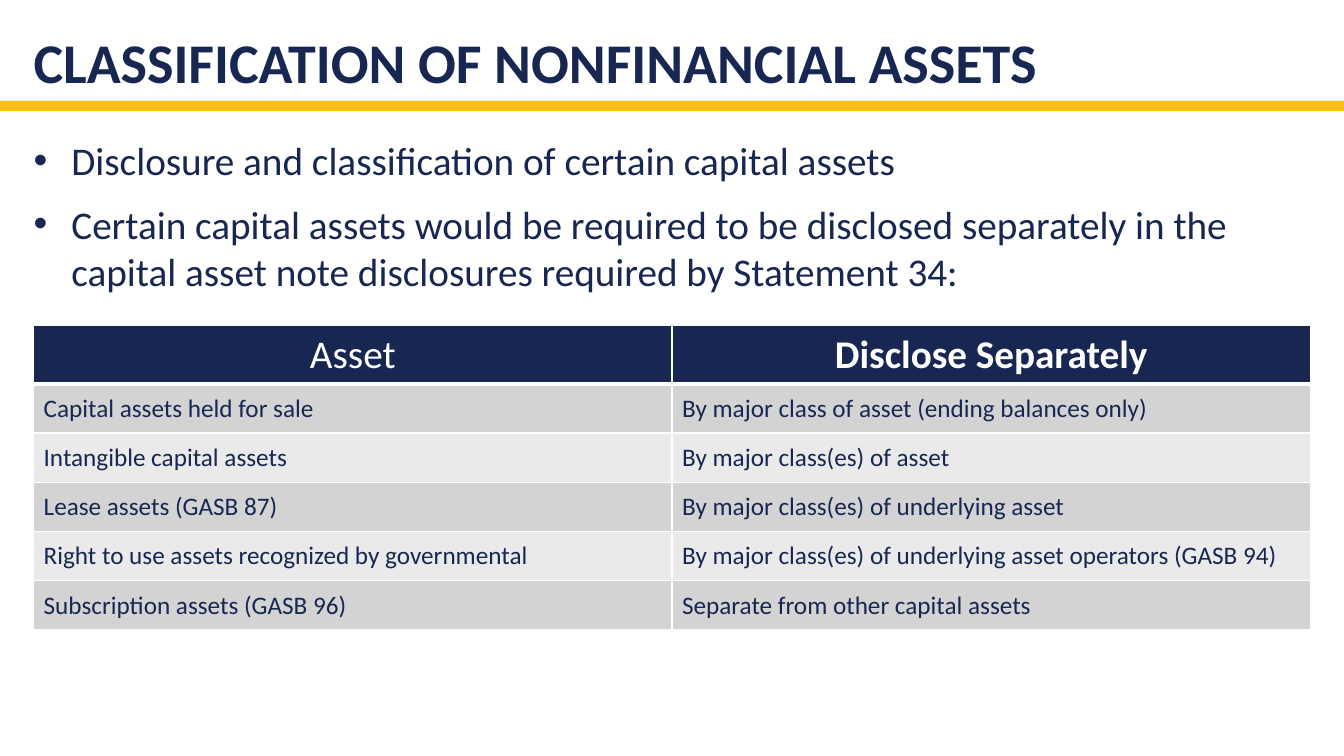
from dataclasses import dataclass

import pptx
import pptx.dml.color
import pptx.enum.shapes
import pptx.enum.text
import pptx.oxml
import pptx.oxml.ns
import pptx.util

Pt = pptx.util.Pt
ALIGN = pptx.enum.text.PP_ALIGN
ANCHOR = pptx.enum.text.MSO_ANCHOR


@dataclass(frozen=True)
class Theme:
    font: str = "Calibri"
    navy: str = "182751"
    gold: str = "FEBD11"
    white: str = "FFFFFF"
    bands: tuple = ("D3D3D4", "EAEAEB")
    title_size: int = 40
    body_size: int = 28
    cell_size: int = 18


THEME = Theme()
TITLE = "CLASSIFICATION OF NONFINANCIAL ASSETS"
POINTS = [
    "Disclosure and classification of certain capital assets",
    "Certain capital assets would be required to be disclosed separately in the "
    "capital asset note disclosures required by Statement 34:",
]
DISCLOSURES = [
    ("Asset", "Disclose Separately"),
    ("Capital assets held for sale", "By major class of asset (ending balances only)"),
    ("Intangible capital assets", "By major class(es) of asset"),
    ("Lease assets (GASB 87)", "By major class(es) of underlying asset"),
    ("Right to use assets recognized by governmental",
     "By major class(es) of underlying asset operators (GASB 94)"),
    ("Subscription assets (GASB 96)", "Separate from other capital assets"),
]


def paint(fill, color):
    fill.solid()
    fill.fore_color.rgb = pptx.dml.color.RGBColor.from_string(color)


def style_font(para, size, color, bold=False):
    para.font.name = THEME.font
    para.font.size = Pt(size)
    para.font.bold = bold
    para.font.color.rgb = pptx.dml.color.RGBColor.from_string(color)


def place_text(holder, left, top, width, height, anchor):
    """Moves a placeholder and returns its text frame, without side insets."""
    holder.left, holder.top = Pt(left), Pt(top)
    holder.width, holder.height = Pt(width), Pt(height)
    frame = holder.text_frame
    frame.margin_left = frame.margin_right = 0
    frame.margin_top = frame.margin_bottom = Pt(3.6)
    frame.word_wrap = True
    frame.auto_size = pptx.enum.text.MSO_AUTO_SIZE.NONE
    frame.vertical_anchor = anchor
    return frame


def add_title(page, left, top, width, height):
    frame = place_text(page.shapes.title, left, top, width, height, ANCHOR.BOTTOM)
    frame.text = TITLE
    para = frame.paragraphs[0]
    para.alignment = ALIGN.LEFT
    para.line_spacing = 0.9
    style_font(para, THEME.title_size, THEME.navy, bold=True)


def add_rule(page, left, top, width, height):
    rule = page.shapes.add_shape(
        pptx.enum.shapes.MSO_SHAPE.RECTANGLE, Pt(left), Pt(top), Pt(width), Pt(height))
    rule.shadow.inherit = False
    rule.line.fill.background()
    paint(rule.fill, THEME.gold)


def add_points(page, left, top, width, height):
    frame = place_text(page.placeholders[1], left, top, width, height, ANCHOR.TOP)
    frame.text = "\n".join(POINTS)
    for para in frame.paragraphs:
        para.space_before = Pt(0)
        para.space_after = Pt(12)
        properties = para._p.get_or_add_pPr()
        properties.set("marL", str(Pt(27)))
        properties.set("indent", str(Pt(-27)))
        properties.append(pptx.oxml.parse_xml(
            f'<a:buFont {pptx.oxml.ns.nsdecls("a")} typeface="Arial"/>'))
        properties.append(pptx.oxml.parse_xml(
            f'<a:buChar {pptx.oxml.ns.nsdecls("a")} char="•"/>'))
        style_font(para, THEME.body_size, THEME.navy)


def add_borders(cell, bottom):
    """Draws white cell edges, 1 point wide but for the bottom one."""
    for side, width in {"L": 1, "R": 1, "T": 1, "B": bottom}.items():
        cell._tc.get_or_add_tcPr().append(pptx.oxml.parse_xml(
            f'<a:ln{side} {pptx.oxml.ns.nsdecls("a")} w="{Pt(width)}">'
            f'<a:solidFill><a:srgbClr val="{THEME.white}"/></a:solidFill></a:ln{side}>'))


def add_disclosure_table(page, left, top, width, header_height, row_height):
    rows, columns = len(DISCLOSURES), len(DISCLOSURES[0])
    height = header_height + (rows - 1) * row_height
    table = page.shapes.add_table(
        rows, columns, Pt(left), Pt(top), Pt(width), Pt(height)).table
    for index, texts in enumerate(DISCLOSURES):
        header = index == 0
        table.rows[index].height = Pt(header_height if header else row_height)
        for column, text in enumerate(texts):
            cell = table.cell(index, column)
            cell.text = text
            cell.vertical_anchor = ANCHOR.MIDDLE
            add_borders(cell, bottom=3 if header else 1)
            para = cell.text_frame.paragraphs[0]
            if header:
                paint(cell.fill, THEME.navy)
                para.alignment = ALIGN.CENTER
                style_font(para, THEME.body_size, THEME.white, bold=column == 1)
            else:
                paint(cell.fill, THEME.bands[(index - 1) % 2])
                style_font(para, THEME.cell_size, THEME.navy)


def main():
    deck = pptx.Presentation()
    deck.slide_width, deck.slide_height = Pt(960), Pt(540)
    page = deck.slides.add_slide(deck.slide_layouts[1])
    margin = 24
    width = 960 - 2 * margin
    add_rule(page, 0, 72, 960, 7.2)
    add_title(page, margin, 0, width, 72)
    add_points(page, margin, 93.6, width, 125.3)
    add_disclosure_table(page, margin, 232.7, width, 37.5, 35.2)
    deck.save("out.pptx")


if __name__ == "__main__":
    main()
